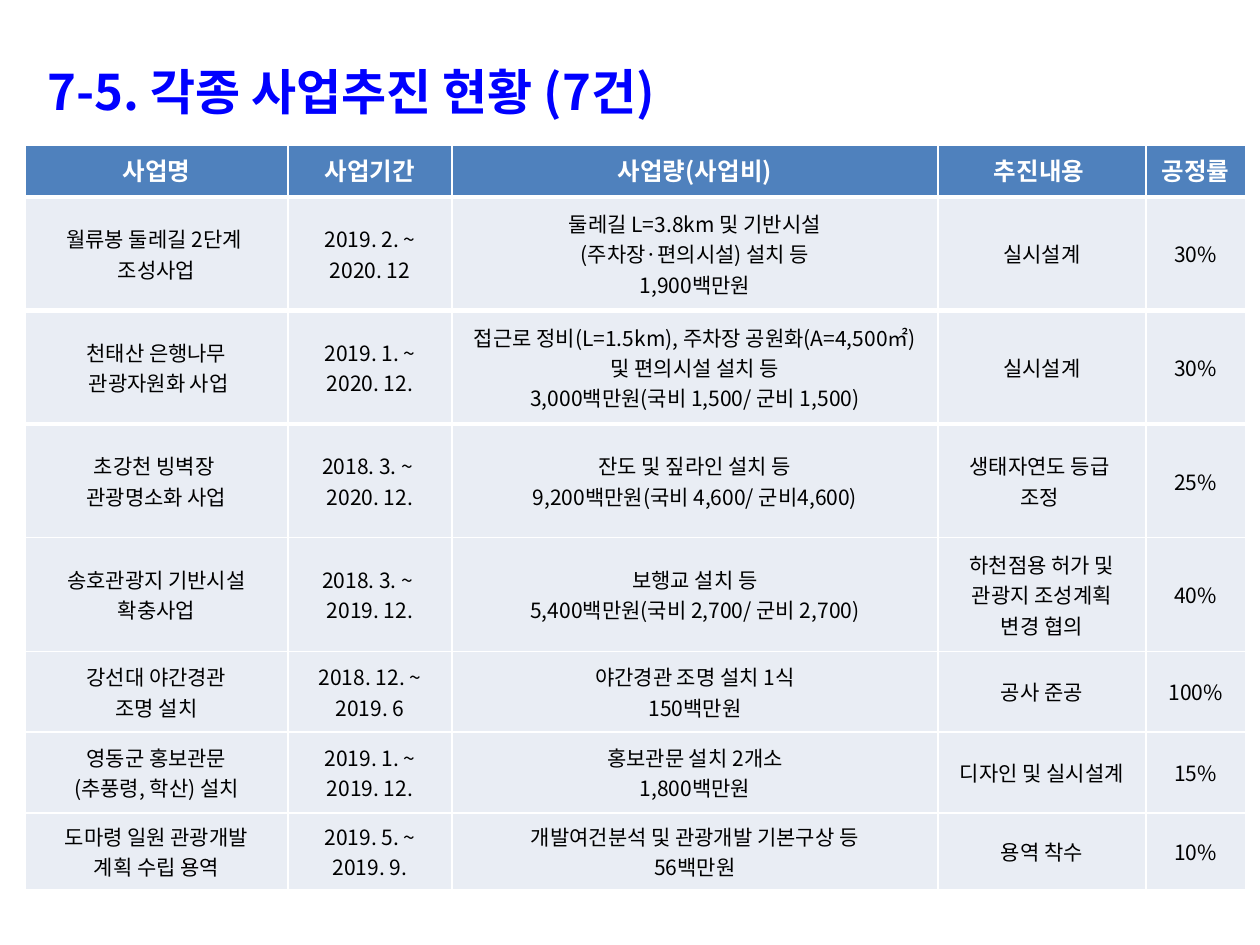
import lxml.etree
import pptx
import pptx.dml.color
import pptx.enum.text
import pptx.oxml.ns
import pptx.util
from pptx.util import Cm

FONT = "Noto Sans CJK KR"
COLORS = {
    "title": "0000FF",
    "header": "4F81BD",
    "body": "E9EDF4",
    "white": "FFFFFF",
    "text": "000000",
}
THIN, THICK = 1, 3  # border widths in points

COLUMN_WIDTHS = [5.31, 3.3, 9.8, 4.19, 2.01]
ROW_HEIGHTS = [1.04] + [2.29] * 4 + [1.63] * 2 + [1.55]
THICK_RULES = 3  # horizontal rules below the first rows that are thick

HEADER = ["사업명", "사업기간", "사업량(사업비)", "추진내용 ", "공정률"]
PROJECTS = [
    ["월류봉 둘레길 2단계 \n조성사업", "2019. 2. ~\n2020. 12",
     "둘레길 L=3.8km 및 기반시설\n(주차장·편의시설) 설치 등\n1,900백만원",
     "실시설계", "30%"],
    ["천태산 은행나무\n 관광자원화 사업", "2019. 1. ~\n2020. 12.",
     "접근로 정비(L=1.5km), 주차장 공원화(A=4,500㎡) 및 편의시설 설치 등\n"
     "3,000백만원(국비 1,500/ 군비 1,500)",
     "실시설계", "30%"],
    ["초강천 빙벽장 \n관광명소화 사업", "2018. 3. ~ \n2020. 12.",
     "잔도 및 짚라인 설치 등\n9,200백만원(국비 4,600/ 군비4,600)",
     "생태자연도 등급 \n조정 ", "25%"],
    ["송호관광지 기반시설\n확충사업", "2018. 3. ~ \n2019. 12.",
     "보행교 설치 등\n5,400백만원(국비 2,700/ 군비 2,700)",
     "하천점용 허가 및 관광지 조성계획\n변경 협의", "40%"],
    ["강선대 야간경관\n조명 설치", "2018. 12. ~\n2019. 6",
     "야간경관 조명 설치 1식\n150백만원", "공사 준공", "100%"],
    ["영동군 홍보관문\n(추풍령, 학산) 설치", "2019. 1. ~\n2019. 12.",
     "홍보관문 설치 2개소\n1,800백만원", "디자인 및 실시설계", "15%"],
    ["도마령 일원 관광개발\n계획 수립 용역", "2019. 5. ~\n2019. 9.",
     "개발여건분석 및 관광개발 기본구상 등\n56백만원", "용역 착수", "10%"],
]


class SlideBuilder:
    """Holds the style and the current slide."""

    def __init__(self, slide, font, colors):
        self.slide = slide
        self.font = font
        self.colors = colors

    def format_runs(self, paragraph, size, color, bold):
        for run in paragraph.runs:
            run.font.size = pptx.util.Pt(size)
            run.font.bold = bold
            run.font.name = self.font
            run.font.color.rgb = pptx.dml.color.RGBColor.from_string(self.colors[color])
            east_asian = lxml.etree.SubElement(
                run.font._element, pptx.oxml.ns.qn("a:ea"))
            east_asian.set("typeface", self.font)

    def add_title(self, text, left, top, width, height):
        shape = self.slide.shapes.add_textbox(left, top, width, height)
        shape.text_frame.word_wrap = False
        shape.text_frame.text = text
        paragraph = shape.text_frame.paragraphs[0]
        paragraph.line_spacing = 1.5
        self.format_runs(paragraph, 28, "title", True)

    def add_borders(self, cell, top, bottom):
        properties = cell._tc.get_or_add_tcPr()
        widths = {"lnL": THIN, "lnR": THIN, "lnT": top, "lnB": bottom}
        for position, (side, width) in enumerate(widths.items()):
            line = lxml.etree.Element(pptx.oxml.ns.qn("a:" + side))
            line.set("w", str(pptx.util.Pt(width)))
            fill = lxml.etree.SubElement(line, pptx.oxml.ns.qn("a:solidFill"))
            color = lxml.etree.SubElement(fill, pptx.oxml.ns.qn("a:srgbClr"))
            color.set("val", self.colors["white"])
            properties.insert(position, line)

    def fill_cell(self, cell, text, is_header):
        cell.text_frame.text = text
        cell.fill.solid()
        cell.fill.fore_color.rgb = pptx.dml.color.RGBColor.from_string(
            self.colors["header" if is_header else "body"])
        if not is_header:
            cell.vertical_anchor = pptx.enum.text.MSO_ANCHOR.MIDDLE
        for paragraph in cell.text_frame.paragraphs:
            paragraph.alignment = pptx.enum.text.PP_ALIGN.CENTER
            if is_header:
                self.format_runs(paragraph, 14, "white", True)
            else:
                self.format_runs(paragraph, 12, "text", False)

    def add_table(self, rows, left, top, column_widths, row_heights):
        table = self.slide.shapes.add_table(
            len(rows), len(column_widths), left, top,
            Cm(sum(column_widths)), Cm(sum(row_heights))).table
        for column, width in zip(table.columns, column_widths):
            column.width = Cm(width)
        for row, height in zip(table.rows, row_heights):
            row.height = Cm(height)
        for row_index, texts in enumerate(rows):
            top_rule = THICK if 1 <= row_index <= THICK_RULES else THIN
            bottom_rule = THICK if row_index < THICK_RULES else THIN
            for column_index, text in enumerate(texts):
                cell = table.cell(row_index, column_index)
                self.fill_cell(cell, text, row_index == 0)
                self.add_borders(cell, top_rule, bottom_rule)


def main():
    presentation = pptx.Presentation()
    presentation.slide_width = Cm(25.4)
    presentation.slide_height = Cm(19.05)
    slide = presentation.slides.add_slide(presentation.slide_layouts[6])
    builder = SlideBuilder(slide, FONT, COLORS)

    # Title
    builder.add_title("7-5. 각종 사업추진 현황 (7건)", Cm(0.71), Cm(0.53), Cm(14.5), Cm(1.78))

    # Project status table
    builder.add_table([HEADER] + PROJECTS, Cm(0.5), Cm(2.93), COLUMN_WIDTHS, ROW_HEIGHTS)

    presentation.save("out.pptx")


if __name__ == "__main__":
    main()
